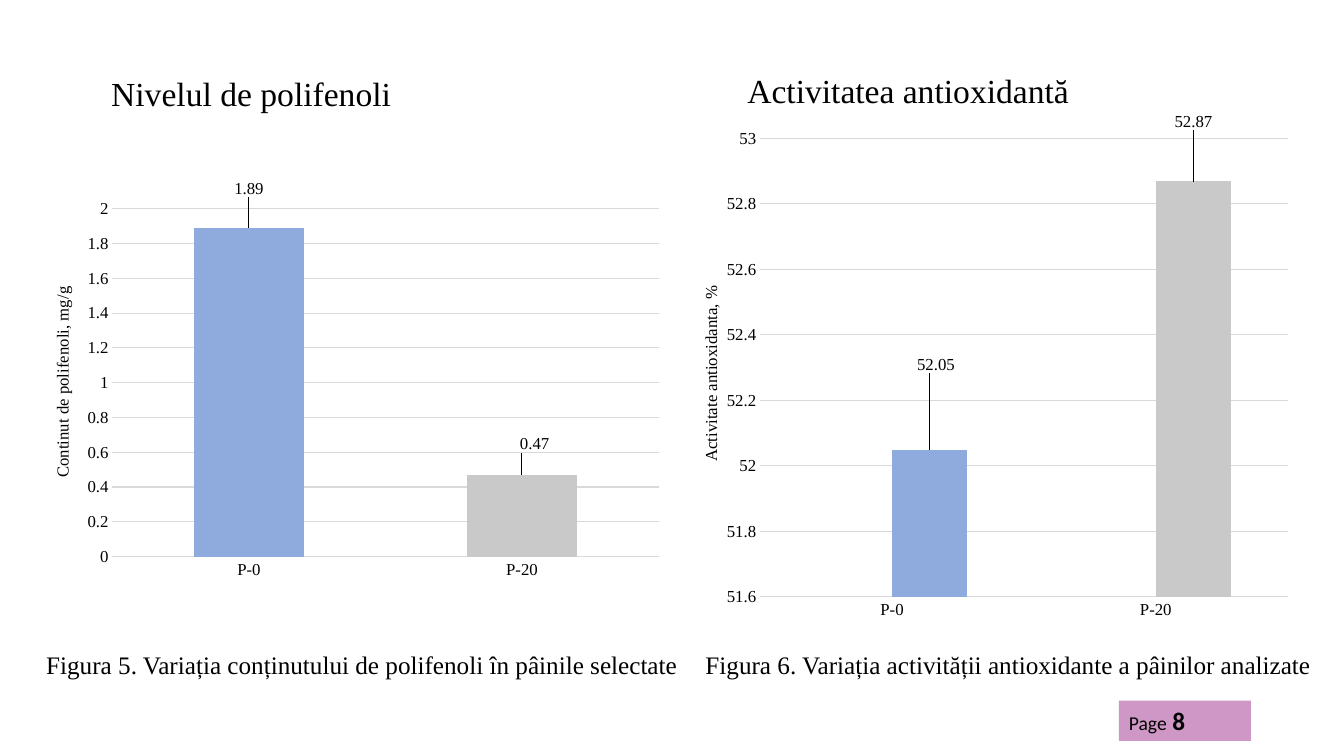
from dataclasses import dataclass
from typing import Optional

import pptx
import pptx.chart.data
import pptx.dml.color
import pptx.enum.chart
import pptx.enum.shapes
import pptx.enum.text
import pptx.oxml
import pptx.oxml.ns
import pptx.util

Pt = pptx.util.Pt
SERIF = "Times New Roman"
BLACK = "000000"
GRID = "D9D9D9"
BAR_COLOURS = ("8FAADC", "C9C9C9")
SAMPLES = ("P-0", "P-20")


@dataclass
class Box:
    left: float
    top: float
    width: float
    height: float


@dataclass
class Label:
    text: str
    box: Box
    size: float
    middle: bool = False
    margin_left: float = 7.2


@dataclass
class BarChart:
    box: Box
    axis_title: str
    title_at: tuple[float, float]
    plot: tuple[float, float, float, float]
    series: dict[str, tuple[Optional[float], ...]]
    minimum: float
    maximum: float
    number_format: str
    label_shifts: tuple[tuple[float, float], ...]


HEADING = Label("Nivelul de polifenoli", Box(66.2, 45.4, 259.2, 45.4), 24, True, 13.2)
LABELS = (
    Label("Activitatea antioxidantă", Box(520.6, 41.8, 278.6, 49), 24, True, 13.2),
    Label("Figura 5. Variația conținutului de polifenoli în pâinile selectate",
          Box(25.9, 463, 470.2, 45.4), 18),
    Label("Figura 6. Variația activității antioxidante a pâinilor analizate",
          Box(496.8, 463, 447.8, 34.6), 18),
)
CHARTS = (
    BarChart(Box(25.9, 128.2, 453.6, 320.4), "Continut de polifenoli, mg/g", (0.02, 0.23),
             (0.12, 0.06, 0.86, 0.78), {"Series 1": (1.89, 0.47)}, 0, 2, "General",
             ((0, -0.06), (0.02, -0.04))),
    BarChart(Box(480.2, 80.6, 448.6, 367.9), "Activitate antioxidanta, %", (0.04, 0.33),
             (0.14, 0.05, 0.84, 0.89),
             {"Series 1": (None, None), "Series 2": (52.05, 52.87)}, 51.6, 53, "0.00",
             ((0.01, -0.14), (0, -0.09))),
)
# The plot area of the first chart keeps its own inner frame
CHARTS[0].plot = (0.12, 0.06, 0.86, 0.78)


def colour(hex_value: str) -> pptx.dml.color.RGBColor:
    return pptx.dml.color.RGBColor.from_string(hex_value)


def frame(box: Box) -> tuple:
    return Pt(box.left), Pt(box.top), Pt(box.width), Pt(box.height)


def style_font(font, size: float, name: str = SERIF, bold: bool = False) -> None:
    font.size, font.name, font.bold = Pt(size), name, bold
    font.color.rgb = colour(BLACK)


def fill_label(shape, label: Label) -> None:
    shape.left, shape.top, shape.width, shape.height = frame(label.box)
    text = shape.text_frame
    text.text = label.text
    text.word_wrap = True
    text.auto_size = pptx.enum.text.MSO_AUTO_SIZE.NONE
    text.margin_left, text.margin_right = Pt(label.margin_left), Pt(0)
    anchors = pptx.enum.text.MSO_ANCHOR
    text.vertical_anchor = anchors.MIDDLE if label.middle else anchors.TOP
    paragraph = text.paragraphs[0]
    paragraph.alignment = pptx.enum.text.PP_ALIGN.LEFT
    paragraph.line_spacing = 0.9
    paragraph.space_before = Pt(0)
    style_font(paragraph.runs[0].font, label.size)


def place(parent, index: int, **settings) -> None:
    """Give a chart part a manual layout, as fractions of the chart."""
    tag = pptx.oxml.ns.qn("c:layout")
    for old in parent.findall(tag):
        parent.remove(old)
    parts = "".join(f'<c:{key} val="{value}"/>' for key, value in settings.items())
    parent.insert(index, pptx.oxml.parse_xml(
        f'<c:layout {pptx.oxml.ns.nsdecls("c")}><c:manualLayout>{parts}'
        "</c:manualLayout></c:layout>"))


def draw_chart(slide, spec_chart: BarChart) -> None:
    data = pptx.chart.data.CategoryChartData()
    data.categories = SAMPLES
    for name, values in spec_chart.series.items():
        data.add_series(name, values)
    chart = slide.shapes.add_chart(
        pptx.enum.chart.XL_CHART_TYPE.COLUMN_CLUSTERED, *frame(spec_chart.box), data).chart
    chart.has_title = chart.has_legend = False
    style_font(chart.font, 10, "Calibri")
    bars = chart.plots[0]
    bars.gap_width, bars.overlap, bars.vary_by_categories = 150, 0, False
    x, y, w, h = spec_chart.plot
    place(chart._chartSpace.chart.plotArea, 0, layoutTarget="inner",
          xMode="edge", yMode="edge", x=x, y=y, w=w, h=h)

    # Axes
    for axis in (chart.category_axis, chart.value_axis):
        axis.major_tick_mark = axis.minor_tick_mark = pptx.enum.chart.XL_TICK_MARK.NONE
        axis.format.line.fill.background()
        style_font(axis.tick_labels.font, 12)
    chart.category_axis.has_major_gridlines = False
    scale = chart.value_axis
    scale.minimum_scale, scale.maximum_scale = spec_chart.minimum, spec_chart.maximum
    scale.major_unit = 0.2
    scale.tick_labels.number_format = "General"
    scale.tick_labels.number_format_is_linked = False
    scale.has_major_gridlines = True
    scale.major_gridlines.format.line.color.rgb = colour(GRID)
    scale.major_gridlines.format.line.width = Pt(0.75)
    title = scale.axis_title
    title.text_frame.text = spec_chart.axis_title
    title.text_frame._txBody.bodyPr.set("rot", "-5400000")
    style_font(title.text_frame.paragraphs[0].runs[0].font, 12)
    x, y = spec_chart.title_at
    place(title._element, 1, xMode="edge", yMode="edge", x=x, y=y)

    # Bars and their values
    measured = bars.series[len(spec_chart.series) - 1]
    values = measured.data_labels
    values.show_value = True
    values.number_format = spec_chart.number_format
    values.number_format_is_linked = False
    style_font(values.font, 12)
    for i, (bar_colour, (dx, dy)) in enumerate(zip(BAR_COLOURS, spec_chart.label_shifts)):
        point = measured.points[i]
        point.format.fill.solid()
        point.format.fill.fore_color.rgb = colour(bar_colour)
        style_font(point.data_label.font, 12)
        point.data_label.position = pptx.enum.chart.XL_LABEL_POSITION.OUTSIDE_END
        place(point.data_label._get_or_add_dLbl(), 1, x=dx, y=dy)


def draw_page_tag(slide) -> None:
    tag = slide.shapes.add_shape(pptx.enum.shapes.MSO_SHAPE.RECTANGLE,
                                 *frame(Box(799.2, 500.4, 94.3, 28.8)))
    tag.shadow.inherit = False
    tag.line.fill.background()
    tag.fill.solid()
    tag.fill.fore_color.rgb = colour("9F318D")
    tint = tag._element.spPr.find(".//" + pptx.oxml.ns.qn("a:srgbClr"))
    tint.append(pptx.oxml.parse_xml(
        f'<a:alpha {pptx.oxml.ns.nsdecls("a")} val="50000"/>'))
    tag.text_frame.vertical_anchor = pptx.enum.text.MSO_ANCHOR.MIDDLE
    paragraph = tag.text_frame.paragraphs[0]
    paragraph.alignment = pptx.enum.text.PP_ALIGN.LEFT
    for text, size, bold in (("Page", 14, False), (" 8", 18, True)):
        run = paragraph.add_run()
        run.text = text
        style_font(run.font, size, "Calibri", bold)


def main() -> None:
    deck = pptx.Presentation()
    deck.slide_width, deck.slide_height = Pt(960), Pt(540)
    slide = deck.slides.add_slide(deck.slide_layouts.get_by_name("Title Only"))

    # Headings and captions
    fill_label(slide.shapes.title, HEADING)
    for label in LABELS:
        fill_label(slide.shapes.add_textbox(*frame(label.box)), label)

    # Charts and page number
    for bar_chart in CHARTS:
        draw_chart(slide, bar_chart)
    draw_page_tag(slide)
    deck.save("out.pptx")


if __name__ == "__main__":
    main()
